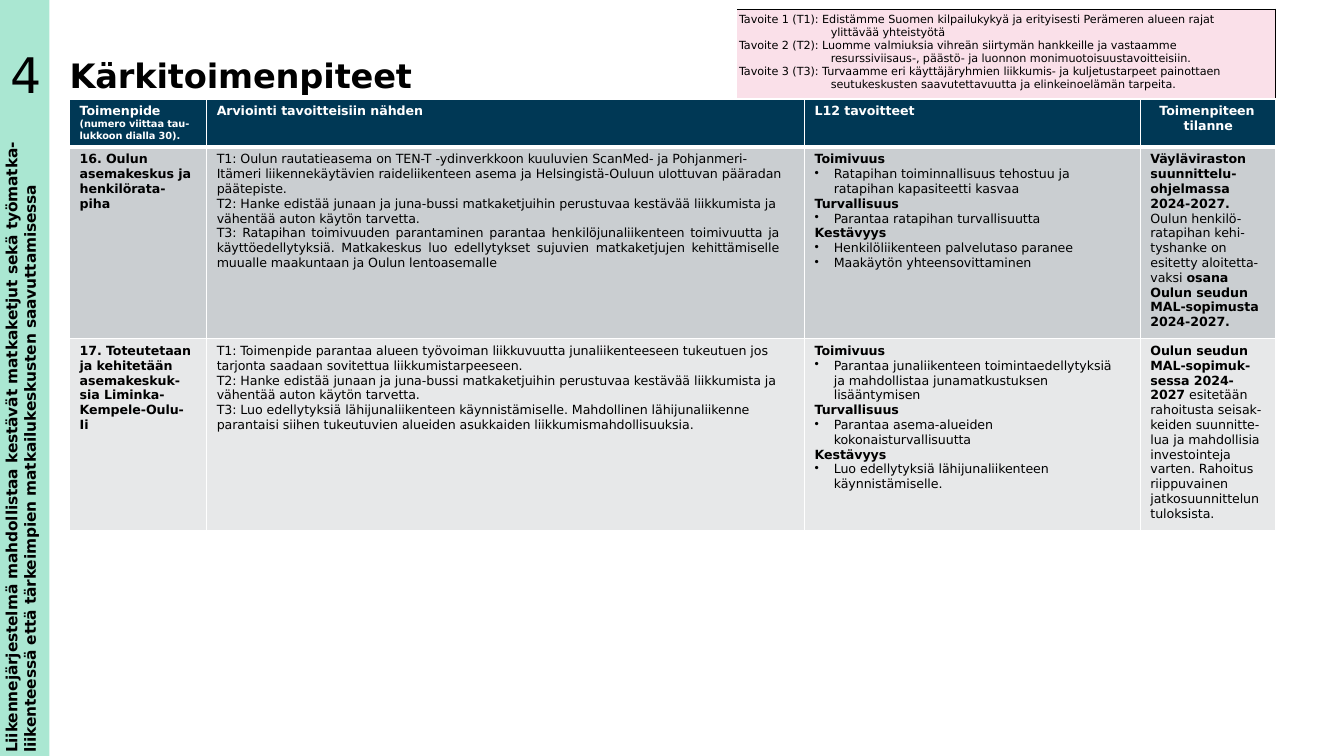
"""Build the slide of key transport measures for goal four."""
from pptx import Presentation
from pptx.dml.color import RGBColor
from pptx.enum.shapes import MSO_SHAPE
from pptx.enum.text import PP_ALIGN
from pptx.oxml import parse_xml
from pptx.oxml.ns import nsdecls
from pptx.oxml.xmlchemy import OxmlElement
from pptx.util import Inches, Pt

COLORS = {
    "black": "000000", "white": "FFFFFF", "navy": "003855", "pink": "FAE0E9",
    "gray": "CACED1", "light": "E7E8E9", "mint": "AAE7D2",
}
FONT = "DejaVu Sans"


def write(frame, lines, size, color="black", left=0.0, first=0.0, right=0.0, spacing=-5):
    """Fill a frame; asterisks toggle bold and a leading bullet makes a list item."""
    frame.word_wrap = True
    for index, line in enumerate(lines):
        paragraph = frame.paragraphs[0] if index == 0 else frame.add_paragraph()
        bulleted = line.startswith("• ")
        properties = paragraph._p.get_or_add_pPr()
        properties.set("marL", str(Inches(0.29 if bulleted else left)))
        properties.set("indent", str(Inches(-0.19 if bulleted else first)))
        properties.set("marR", str(Inches(right)))
        if bulleted:
            bullet = OxmlElement("a:buChar")
            bullet.set("char", "•")
            properties.append(bullet)
        for part, text in enumerate(line.removeprefix("• ").split("*")):
            if text:
                run = paragraph.add_run()
                run.text = text
                run.font.name = FONT
                run.font.size = Pt(size)
                run.font.bold = part % 2 == 1
                run.font.color.rgb = RGBColor.from_string(COLORS[color])
                run._r.get_or_add_rPr().set("spc", str(spacing))


def style_cell(cell, fill, borders):
    """Set the borders (side: color and width), the fill and the margins of a cell."""
    for side in "LRTB":
        color, width = borders.get(side, ("white", 1))
        cell._tc.get_or_add_tcPr().append(parse_xml(
            f'<a:ln{side} {nsdecls("a")} w="{Pt(width)}"><a:solidFill>'
            f'<a:srgbClr val="{COLORS[color]}"/></a:solidFill></a:ln{side}>'))
    cell.fill.solid()
    cell.fill.fore_color.rgb = RGBColor.from_string(COLORS[fill])
    cell.margin_left = cell.margin_right = cell.margin_bottom = 0
    cell.margin_top = Inches(0.05)


presentation = Presentation()
presentation.slide_width = Inches(13.33)
presentation.slide_height = Inches(7.5)
slide = presentation.slides.add_slide(presentation.slide_layouts[6])

column_widths = [1.36, 5.25, 0.68, 3.33, 1.34]
row_heights = [0.89, 0.48, 1.9, 1.9]
table = slide.shapes.add_table(
    len(row_heights), len(column_widths), Inches(0.69), Inches(0.09),
    Inches(sum(column_widths)), Inches(sum(row_heights))).table
table.first_row = False
table.horz_banding = False
for column, width in zip(table.columns, column_widths):
    column.width = Inches(width)
for row, height in zip(table.rows, row_heights):
    row.height = Inches(height)

outline = ("black", 0.75)
for row_index, fill in enumerate(["pink", "navy", "gray", "light"]):
    for column_index in range(len(column_widths)):
        borders = {}
        if row_index == 0:
            borders = {"B": ("white", 1.5)}
            if column_index >= 2:
                borders.update(T=outline, L=outline, R=outline)
            elif column_index == 1:
                borders["R"] = outline
        elif row_index == 1:
            borders = {"T": ("white", 1.5), "B": ("white", 3)}
        elif row_index == 2:
            borders = {"T": ("white", 3)}
        is_title = row_index == 0 and column_index < 2
        style_cell(table.cell(row_index, column_index), "white" if is_title else fill, borders)

table.cell(0, 0).merge(table.cell(0, 1))
table.cell(0, 2).merge(table.cell(0, 4))
for row_index in range(1, len(row_heights)):
    table.cell(row_index, 1).merge(table.cell(row_index, 2))

title_cell = table.cell(0, 0)
title_cell.margin_top = Inches(0.49)
write(title_cell.text_frame, ["*Kärkitoimenpiteet*"], 24, spacing=-10)
title_cell.text_frame.paragraphs[0].line_spacing = Pt(27.1)

goals_cell = table.cell(0, 2)
goals_cell.margin_top = Inches(0.04)
write(goals_cell.text_frame, [
    "Tavoite 1 (T1): Edistämme Suomen kilpailukykyä ja erityisesti Perämeren alueen rajat "
    "ylittävää yhteistyötä",
    "Tavoite 2 (T2): Luomme valmiuksia vihreän siirtymän hankkeille ja vastaamme "
    "resurssiviisaus-, päästö- ja luonnon monimuotoisuustavoitteisiin.",
    "Tavoite 3 (T3): Turvaamme eri käyttäjäryhmien liikkumis- ja kuljetustarpeet painottaen "
    "seutukeskusten saavutettavuutta ja elinkeinoelämän tarpeita.",
], 8, left=0.94, first=-0.91, right=0.1)

headers = {
    0: ["*Toimenpide*", "*(numero viittaa tau- lukkoon dialla 30).*"],
    1: ["*Arviointi tavoitteisiin nähden*"],
    3: ["*L12 tavoitteet*"],
    4: ["*Toimenpiteen tilanne*"],
}
for column_index, lines in headers.items():
    left, first = (0.43, -0.24) if column_index == 4 else (0.1, 0)
    write(table.cell(1, column_index).text_frame, lines, 9, "white", left, first)
for run in table.cell(1, 0).text_frame.paragraphs[1].runs:
    run.font.size = Pt(7)

measures = [
    {
        0: ["*16. Oulun asemakeskus ja henkilörata- piha*"],
        1: ["T1: Oulun rautatieasema on TEN-T -ydinverkkoon kuuluvien ScanMed- ja Pohjanmeri- "
            "Itämeri liikennekäytävien raideliikenteen asema ja Helsingistä-Ouluun ulottuvan "
            "pääradan päätepiste.",
            "T2: Hanke edistää junaan ja juna-bussi matkaketjuihin perustuvaa kestävää "
            "liikkumista ja vähentää auton käytön tarvetta.",
            "T3: Ratapihan toimivuuden parantaminen parantaa henkilöjunaliikenteen toimivuutta "
            "ja käyttöedellytyksiä. Matkakeskus luo edellytykset sujuvien matkaketjujen "
            "kehittämiselle muualle maakuntaan ja Oulun lentoasemalle"],
        3: ["*Toimivuus*",
            "• Ratapihan toiminnallisuus tehostuu ja ratapihan kapasiteetti kasvaa",
            "*Turvallisuus*", "• Parantaa ratapihan turvallisuutta",
            "*Kestävyys*", "• Henkilöliikenteen palvelutaso paranee",
            "• Maakäytön yhteensovittaminen"],
        4: ["*Väyläviraston suunnittelu- ohjelmassa 2024-2027.*",
            "Oulun henkilö- ratapihan kehi- tyshanke on esitetty aloitetta- vaksi "
            "*osana Oulun seudun MAL-sopimusta 2024-2027.*"],
    },
    {
        0: ["*17. Toteutetaan ja kehitetään asemakeskuk- sia Liminka- Kempele-Oulu- Ii*"],
        1: ["T1: Toimenpide parantaa alueen työvoiman liikkuvuutta junaliikenteeseen tukeutuen "
            "jos tarjonta saadaan sovitettua liikkumistarpeeseen.",
            "T2: Hanke edistää junaan ja juna-bussi matkaketjuihin perustuvaa kestävää "
            "liikkumista ja vähentää auton käytön tarvetta.",
            "T3: Luo edellytyksiä lähijunaliikenteen käynnistämiselle. Mahdollinen "
            "lähijunaliikenne parantaisi siihen tukeutuvien alueiden asukkaiden "
            "liikkumismahdollisuuksia."],
        3: ["*Toimivuus*",
            "• Parantaa junaliikenteen toimintaedellytyksiä ja mahdollistaa "
            "junamatkustuksen lisääntymisen",
            "*Turvallisuus*", "• Parantaa asema-alueiden kokonaisturvallisuutta",
            "*Kestävyys*", "• Luo edellytyksiä lähijunaliikenteen käynnistämiselle."],
        4: ["*Oulun seudun MAL-sopimuk- sessa 2024-*",
            "*2027* esitetään rahoitusta seisak- keiden suunnitte- lua ja mahdollisia "
            "investointeja varten. Rahoitus riippuvainen jatkosuunnittelun tuloksista."],
    },
]
right_margins = {0: 0.13, 1: 0.2, 3: 0.2, 4: 0.1}
for row_index, measure in enumerate(measures, start=2):
    for column_index, lines in measure.items():
        write(table.cell(row_index, column_index).text_frame, lines, 9,
              left=0.1, right=right_margins[column_index])
justified = table.cell(2, 1).text_frame.paragraphs[2]
justified.alignment = PP_ALIGN.JUSTIFY
justified._p.get_or_add_pPr().set("marR", str(Inches(0.26)))

band = slide.shapes.add_shape(MSO_SHAPE.RECTANGLE, 0, 0, Inches(0.49), Inches(7.5))
band.shadow.inherit = False
band.fill.solid()
band.fill.fore_color.rgb = RGBColor.from_string(COLORS["mint"])
band.line.fill.background()

goal_text = ("*Liikennejärjestelmä mahdollistaa kestävät matkaketjut sekä työmatka- "
             "liikenteessä että tärkeimpien matkailukeskusten saavuttamisessa*")
side_texts = [
    (0.02, 1.31, 0.4, 6.17, goal_text, 11, "vert270"),
    (0.09, 0.42, 0.34, 0.61, "4", 35, "horz"),
]
for left, top, width, height, text, size, direction in side_texts:
    box = slide.shapes.add_textbox(Inches(left), Inches(top), Inches(width), Inches(height))
    frame = box.text_frame
    frame.margin_left = frame.margin_right = frame.margin_bottom = 0
    frame.margin_top = Inches(0.02)
    frame._txBody.bodyPr.set("vert", direction)
    write(frame, [text], size, left=0.01, spacing=-10)

presentation.save("out.pptx")
